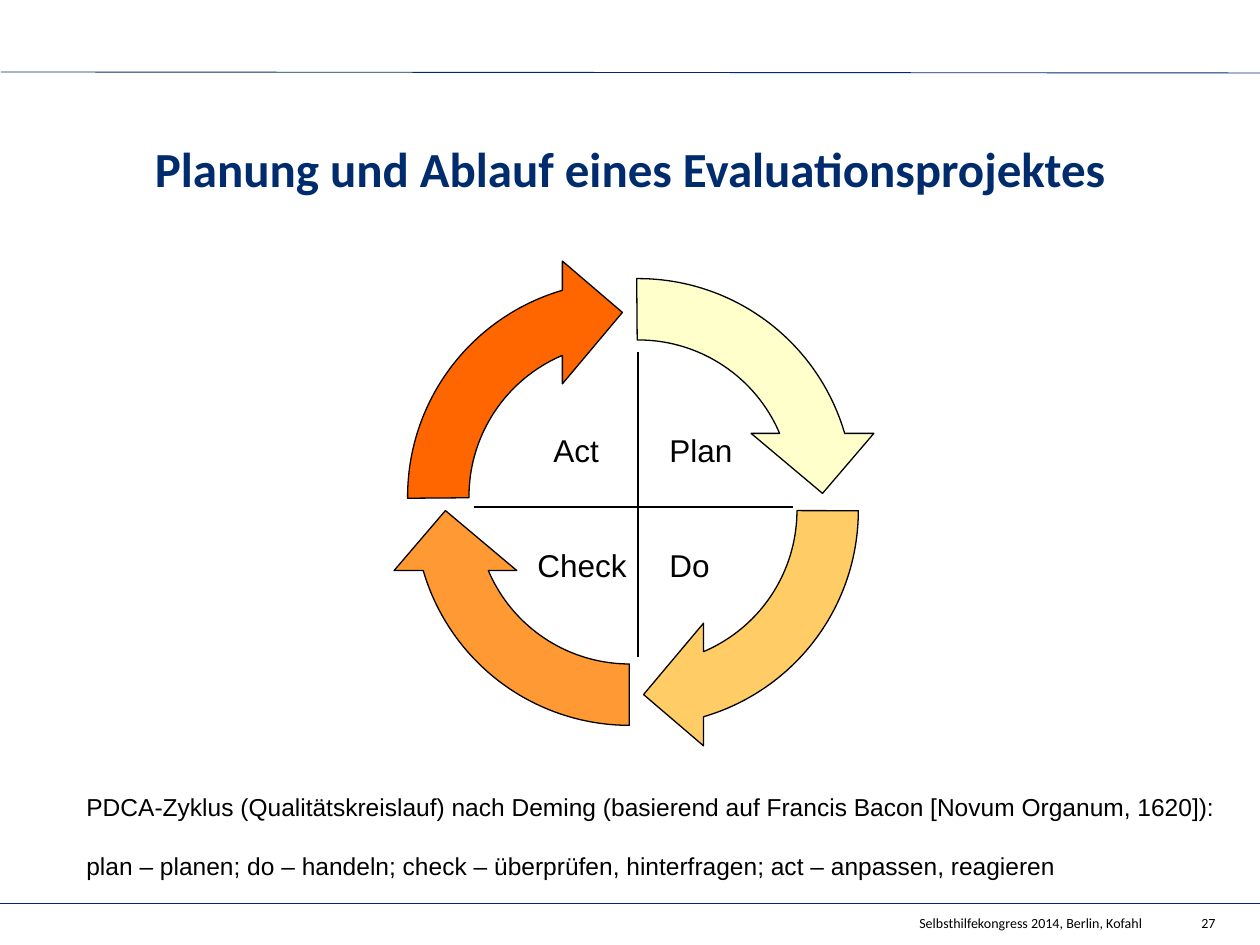
from lxml import etree
from pptx import Presentation
from pptx import util as u
from pptx.dml.color import RGBColor
from pptx.enum import shapes, text
from pptx.oxml import ns

EMU_PER_PX = 914400 / 126
NAVY = RGBColor(0x00, 0x2B, 0x6D)
BLACK = RGBColor(0x00, 0x00, 0x00)
ORANGE = RGBColor(0xFF, 0x66, 0x00)
AMBER = RGBColor(0xFF, 0xCC, 0x66)
CREAM = RGBColor(0xFF, 0xFF, 0xCC)
TANGERINE = RGBColor(0xFF, 0x99, 0x33)

ARROW_SIZE = 491
# left, top, rotation, start angle adjustment, fill
CYCLE_ARROWS = [
    (377, 251, 270, 161.73, ORANGE),
    (398, 265, 90, 162.04, AMBER),
    (393, 248, 0, 161.73, CREAM),
    (384, 265, 180, 162.04, TANGERINE),
]


def px(length):
    return u.Emu(round(length * EMU_PER_PX))


def write(shape, *lines, size, font="Arial", color=BLACK, bold=False,
          align=text.PP_ALIGN.LEFT, gap=0, tabs=()):
    """Fill a shape with one paragraph per line, gap points apart."""
    frame = shape.text_frame
    frame.word_wrap = True
    for index, line in enumerate(lines):
        paragraph = frame.add_paragraph() if index else frame.paragraphs[0]
        paragraph.text = line
        paragraph.alignment = align
        if index:
            paragraph.space_before = u.Pt(gap)
        if tabs:
            add_tabs(paragraph, tabs)
        for run in paragraph.runs:
            run.font.name = font
            run.font.size = u.Pt(size)
            run.font.bold = bold
            run.font.color.rgb = color


def add_tabs(paragraph, stops):
    properties = paragraph._p.get_or_add_pPr()
    tab_list = etree.SubElement(properties, ns.qn("a:tabLst"))
    for stop in stops:
        etree.SubElement(tab_list, ns.qn("a:tab"), pos=str(px(stop)), algn="l")


def add_text(parent, left, top, width, height, *lines, **style):
    box = parent.add_textbox(px(left), px(top), px(width), px(height))
    write(box, *lines, **style)


def add_line(parent, x1, y1, x2, y2, color, width):
    line = parent.add_connector(shapes.MSO_CONNECTOR.STRAIGHT,
                                px(x1), px(y1), px(x2), px(y2))
    line.line.color.rgb = color
    line.line.width = u.Pt(width)
    etree.SubElement(line._element.spPr, ns.qn("a:effectLst"))


def add_cycle_arrow(parent, left, top, rotation, start, fill):
    arrow = parent.add_shape(shapes.MSO_SHAPE.CIRCULAR_ARROW, px(left), px(top),
                             px(ARROW_SIZE), px(ARROW_SIZE))
    for index, value in enumerate((0.125, 11.42, 204.58, start, 0.125)):
        arrow.adjustments[index] = value
    arrow.rotation = rotation
    arrow.shadow.inherit = False
    arrow.fill.solid()
    arrow.fill.fore_color.rgb = fill
    arrow.line.color.rgb = BLACK
    arrow.line.width = u.Pt(0.75)


def add_title(slide, title_text):
    title = slide.shapes.title
    title.left, title.top, title.width, title.height = map(px, (84, 84, 1092, 168))
    title.text_frame.vertical_anchor = text.MSO_ANCHOR.MIDDLE
    write(title, title_text, size=28, font="Calibri", color=NAVY, bold=True,
          align=text.PP_ALIGN.CENTER)


def add_cycle(slide):
    group = slide.shapes.add_group_shape().shapes
    for arrow in CYCLE_ARROWS:
        add_cycle_arrow(group, *arrow)
    add_text(group, 525, 425, 229, 165, "\tAct\tPlan", "Check\tDo",
             size=18, gap=44, tabs=(16, 132))
    add_line(group, 638, 352, 638, 657, BLACK, 0.75)
    add_line(group, 474, 507, 793, 507, BLACK, 0.75)


def add_footer(slide):
    style = {"size": 8, "font": "Calibri", "align": text.PP_ALIGN.RIGHT}
    add_text(slide.shapes, 756, 908, 399, 22,
             "Selbsthilfekongress 2014, Berlin, Kofahl", **style)
    add_text(slide.shapes, 1165, 908, 63, 22, "27", **style)


def main():
    presentation = Presentation()
    presentation.slide_width, presentation.slide_height = px(1260), px(945)
    slide = presentation.slides.add_slide(presentation.slide_layouts[5])
    add_line(slide.shapes, 1, 72, 1260, 73, NAVY, 0.5)
    add_line(slide.shapes, 0, 903, 1260, 903, NAVY, 0.5)
    add_title(slide, "Planung und Ablauf eines Evaluationsprojektes")
    add_cycle(slide)
    add_text(slide.shapes, 74, 786, 1160, 102,
             "PDCA-Zyklus (Qualitätskreislauf) nach Deming "
             "(basierend auf Francis Bacon [Novum Organum, 1620]):",
             "plan – planen; do – handeln; check – überprüfen, hinterfragen; "
             "act – anpassen, reagieren",
             size=14, gap=17)
    add_footer(slide)
    presentation.save("out.pptx")


if __name__ == "__main__":
    main()
